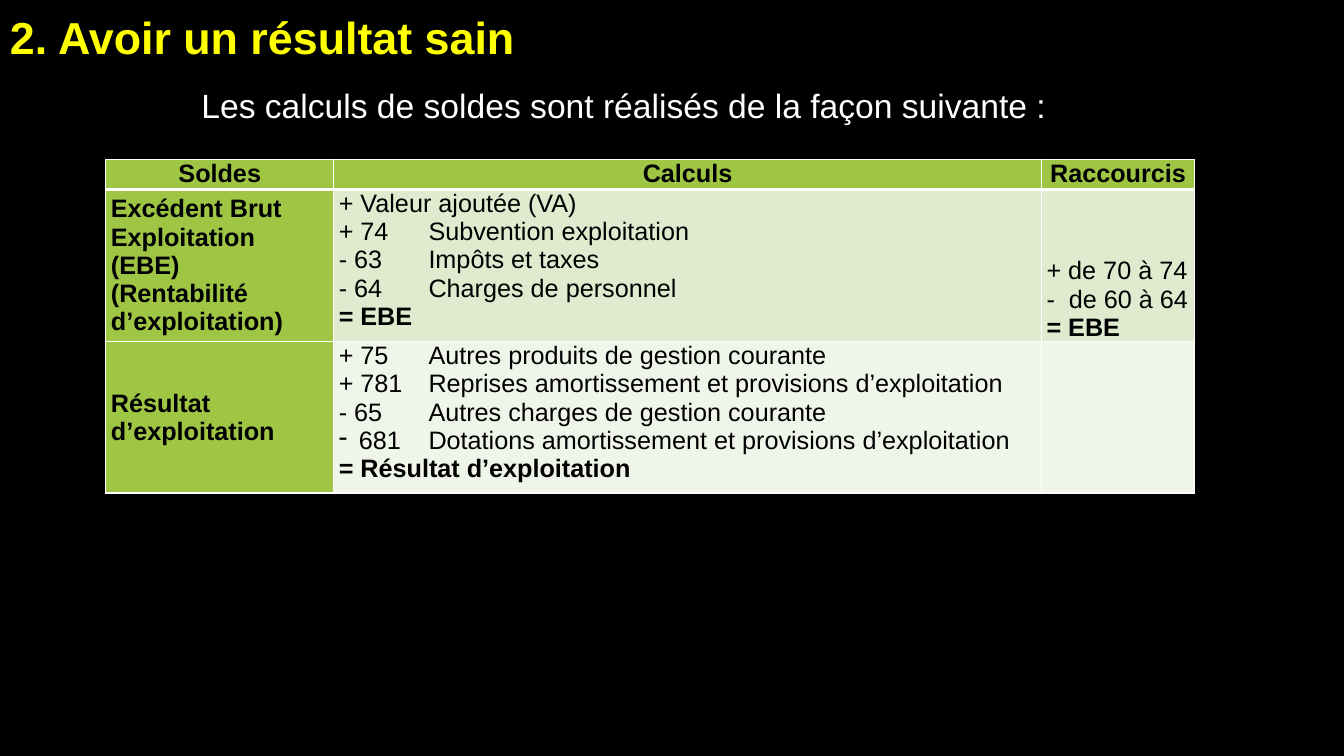
from pptx import Presentation
from pptx.dml.color import RGBColor
from pptx.enum.text import MSO_ANCHOR, PP_ALIGN
from pptx.oxml import parse_xml
from pptx.oxml.ns import nsdecls
from pptx.util import Inches, Pt

BLACK = RGBColor(0x00, 0x00, 0x00)
WHITE = RGBColor(0xFF, 0xFF, 0xFF)
YELLOW = RGBColor(0xFF, 0xFF, 0x00)
GREEN = RGBColor(0x9E, 0xC5, 0x44)
PALE_GREEN = RGBColor(0xDF, 0xEA, 0xCF)
PALEST_GREEN = RGBColor(0xF0, 0xF5, 0xE9)

LEFT, CENTER, JUSTIFY = PP_ALIGN.LEFT, PP_ALIGN.CENTER, PP_ALIGN.JUSTIFY
TOP, MIDDLE, BOTTOM = MSO_ANCHOR.TOP, MSO_ANCHOR.MIDDLE, MSO_ANCHOR.BOTTOM

ACCOUNT_TAB = 0.89
BULLET_INDENT = 0.2
COLUMN_WIDTHS = (2.26, 7.02, 1.52)
ROW_HEIGHTS = (0.3, 1.51, 1.49)

# Each cell holds its lines; a line starting with "=" is a bold total,
# one starting with "•" gets a dash bullet.
BALANCE_ROWS = [
    [["Soldes"], ["Calculs"], ["Raccourcis"]],
    [
        ["Excédent Brut", "Exploitation (EBE)", "(Rentabilité d’exploitation)"],
        ["+ Valeur ajoutée (VA)", "+ 74\tSubvention exploitation",
         "- 63\tImpôts et taxes", "- 64\tCharges de personnel", "= EBE"],
        ["+ de 70 à 74", "-  de 60 à 64", "= EBE"],
    ],
    [
        ["Résultat d’exploitation"],
        ["+ 75\tAutres produits de gestion courante",
         "+ 781\tReprises amortissement et provisions d’exploitation",
         "- 65\tAutres charges de gestion courante",
         "•681\tDotations amortissement et provisions d’exploitation",
         "= Résultat d’exploitation"],
        [],
    ],
]
ROW_FILLS = (GREEN, PALE_GREEN, PALEST_GREEN)
BODY_ALIGNS = (LEFT, JUSTIFY, LEFT)
BODY_ANCHORS = (MIDDLE, TOP, BOTTOM)
RULE_WIDTHS = (1, 3, 1, 1)  # horizontal rules, from the top of the table down


def apply(target, values):
    for name, value in values.items():
        setattr(target, name, value)


class SlideBuilder:
    font_name = "Arial"

    def __init__(self, page):
        self.page = page

    def background(self, color):
        fill = self.page.background.fill
        fill.solid()
        fill.fore_color.rgb = color

    def span(self, para, text, size, color, bold=False, **layout):
        apply(para, layout)
        span = para.add_run()
        span.text = text
        apply(span.font, {"name": self.font_name, "size": Pt(size), "bold": bold})
        span.font.color.rgb = color

    def text(self, place, text, size, color, wrap=True, **options):
        box = self.page.shapes.add_textbox(*map(Inches, place))
        box.text_frame.word_wrap = wrap
        self.span(box.text_frame.paragraphs[0], text, size, color, **options)

    def tabulate(self, para, bulleted):
        """Align account labels on one tab stop, with a dash bullet if asked."""
        props = para._p.get_or_add_pPr()
        if bulleted:
            indent = Inches(BULLET_INDENT)
            props.set("marL", str(indent))
            props.set("indent", str(-indent))
            props.append(parse_xml(f'<a:buChar {nsdecls("a")} char="-"/>'))
        props.append(parse_xml(
            f'<a:tabLst {nsdecls("a")}>'
            f'<a:tab pos="{Inches(ACCOUNT_TAB)}" algn="l"/></a:tabLst>'))

    def borders(self, cell, top_width, bottom_width):
        props = cell._tc.get_or_add_tcPr()
        widths = {"lnL": 1, "lnR": 1, "lnT": top_width, "lnB": bottom_width}
        for position, (side, width) in enumerate(widths.items()):
            props.insert(position, parse_xml(
                f'<a:{side} {nsdecls("a")} w="{Pt(width)}"><a:solidFill>'
                f'<a:srgbClr val="{WHITE}"/></a:solidFill></a:{side}>'))

    def cell(self, cell, lines, fill, align, anchor, bold, rules):
        apply(cell, {"margin_left": Inches(0.05), "margin_right": Inches(0.05),
                     "margin_top": 0, "margin_bottom": 0, "vertical_anchor": anchor})
        cell.fill.solid()
        cell.fill.fore_color.rgb = fill
        self.borders(cell, *rules)
        frame = cell.text_frame
        for index, line in enumerate(lines):
            para = frame.add_paragraph() if index else frame.paragraphs[0]
            self.span(para, line.lstrip("•"), 18, BLACK,
                      bold or line.startswith("="), alignment=align)
            if "\t" in line:
                self.tabulate(para, line.startswith("•"))

    def table(self, left, top, rows):
        frame = self.page.shapes.add_table(
            len(rows), len(COLUMN_WIDTHS), Inches(left), Inches(top),
            Inches(sum(COLUMN_WIDTHS)), Inches(sum(ROW_HEIGHTS)))
        table = frame.table
        for column, width in zip(table.columns, COLUMN_WIDTHS):
            column.width = Inches(width)
        for row, height in zip(table.rows, ROW_HEIGHTS):
            row.height = Inches(height)
        for r, row in enumerate(rows):
            header = r == 0
            for c, lines in enumerate(row):
                self.cell(
                    table.cell(r, c), lines,
                    fill=GREEN if c == 0 else ROW_FILLS[r],
                    align=CENTER if header else BODY_ALIGNS[c],
                    anchor=TOP if header else BODY_ANCHORS[c],
                    bold=header or c == 0,
                    rules=RULE_WIDTHS[r:r + 2])


def main():
    deck = Presentation()
    apply(deck, {"slide_width": Inches(13.33), "slide_height": Inches(7.5)})
    builder = SlideBuilder(deck.slides.add_slide(deck.slide_layouts[6]))
    builder.background(BLACK)
    builder.text((1.9, 0.79, 8.66, 0.5),
                 "Les calculs de soldes sont réalisés de la façon suivante :",
                 24, WHITE, wrap=False, alignment=JUSTIFY,
                 space_before=Pt(6), space_after=Pt(6))
    builder.table(1.05, 1.58, BALANCE_ROWS)
    builder.text((0, 0.05, 10.75, 0.64), "2. Avoir un résultat sain", 32, YELLOW,
                 bold=True, space_before=Pt(12), space_after=Pt(6))
    deck.save("out.pptx")


if __name__ == "__main__":
    main()
